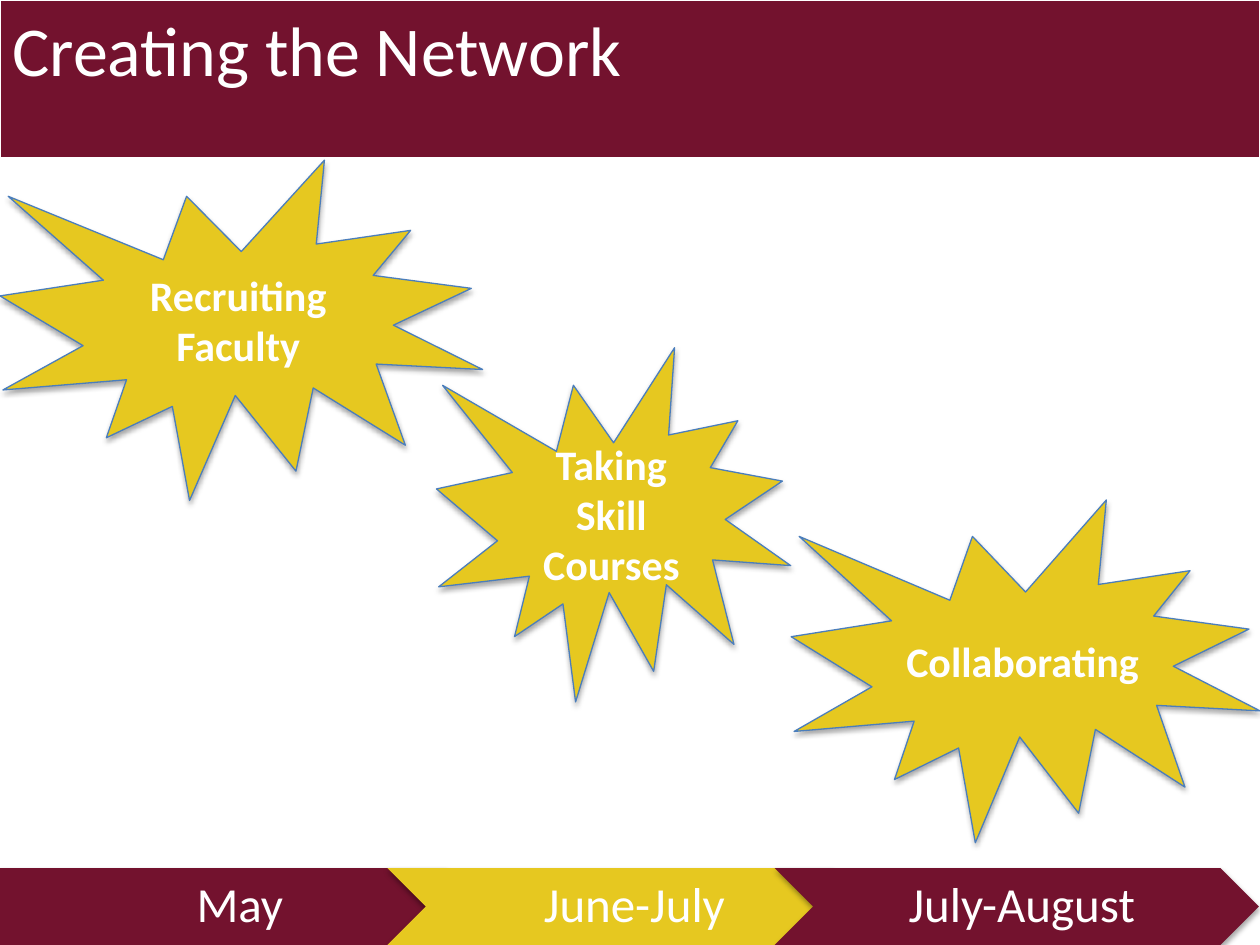
from lxml import etree
from pptx import Presentation
from pptx.dml.color import RGBColor
from pptx.enum.shapes import MSO_SHAPE
from pptx.enum.text import MSO_ANCHOR, MSO_AUTO_SIZE, PP_ALIGN
from pptx.oxml.ns import qn
from pptx.util import Cm, Pt

SEAL = MSO_SHAPE.EXPLOSION1
PLATE = MSO_SHAPE.PENTAGON
CHEVRON = MSO_SHAPE.CHEVRON
TOP, MIDDLE = MSO_ANCHOR.TOP, MSO_ANCHOR.MIDDLE
LEFT, CENTER = PP_ALIGN.LEFT, PP_ALIGN.CENTER
FIXED = MSO_AUTO_SIZE.NONE

WINE, GOLD, BLUE, WHITE = "73122E", "E6C820", "4B7EBC", "FFFFFF"
INSETS = (0.25, 0.13, 0.25, 0.13)


def color(code):
    return RGBColor.from_string(code)


def write(shape, text, size, bold=False, align=CENTER, anchor=MIDDLE,
          insets=INSETS, spacing=1.0):
    frame = shape.text_frame
    frame.word_wrap = True
    frame.auto_size = FIXED
    frame.vertical_anchor = anchor
    (frame.margin_left, frame.margin_top,
     frame.margin_right, frame.margin_bottom) = map(Cm, insets)
    para = frame.paragraphs[0]
    para.alignment = align
    para.line_spacing = spacing
    run = para.add_run()
    run.text = text
    run.font.name = "Calibri"
    run.font.size = Pt(size)
    run.font.bold = bold
    run.font.color.rgb = color(WHITE)


def paint(shape, fill, line=None):
    shape.fill.solid()
    shape.fill.fore_color.rgb = color(fill)
    if line:
        shape.line.color.rgb = color(line)
        shape.line.width = Pt(0.75)
    else:
        shape.line.fill.background()


def shade(shape):
    """Give the shape a soft shadow straight below it."""
    shape.shadow.inherit = False
    effects = shape._element.spPr.find(qn("a:effectLst"))
    outer = etree.SubElement(effects, qn("a:outerShdw"), blurRad=str(Pt(3.1)),
                             dist=str(Pt(1.8)), dir="5400000", rotWithShape="0")
    black = etree.SubElement(outer, qn("a:srgbClr"), val="000000")
    etree.SubElement(black, qn("a:alpha"), val="35000")


def add_title(slide, text, box):
    title = slide.shapes.title
    title.left, title.top, title.width, title.height = map(Cm, box)
    paint(title, WINE, WHITE)
    write(title, text, 40, align=LEFT, anchor=TOP)


def add_burst(slide, text, box):
    burst = slide.shapes.add_shape(SEAL, *map(Cm, box))
    paint(burst, GOLD, BLUE)
    shade(burst)
    write(burst, text, 24, bold=True)


def add_timeline(slide, steps, box):
    left, top, width, height = box
    # Each arrow overlaps the next by a fifth of its length
    length = width / (1 + 0.8 * (len(steps) - 1))
    point = height / 2
    group = slide.shapes.add_group_shape().shapes
    for i, (text, fill) in enumerate(steps):
        x = left + i * 0.8 * length
        arrow = group.add_shape(CHEVRON if i else PLATE,
                                Cm(x), Cm(top), Cm(length), Cm(height))
        paint(arrow, fill)
        shade(arrow)
        # The label keeps clear of the notch and the point
        start = point if i else 0
        span = length - 2 * point if i else length - point / 2
        label = group.add_textbox(Cm(x + start), Cm(top), Cm(span), Cm(height))
        write(label, text, 28, spacing=0.9,
              insets=(0.3 if i else 0.4, 0.2, 0.1, 0.2))


def main():
    deck = Presentation()
    deck.slide_width, deck.slide_height = Cm(25.4), Cm(19.05)
    slide = deck.slides.add_slide(deck.slide_layouts[5])

    # Title band
    add_title(slide, "Creating the Network", (0, 0, 25.4, 3.18))

    # Stages of the work
    for text, box in (
        ("Recruiting Faculty", (0, 3.23, 9.73, 6.86)),
        ("Taking Skill Courses", (8.8, 7.01, 7.14, 7.14)),
        ("Collaborating", (15.95, 10.08, 9.45, 6.91)),
    ):
        add_burst(slide, text, box)

    # Months along the bottom
    steps = (("May", WINE), ("June-July", GOLD), ("July-August", WINE))
    add_timeline(slide, steps, (0, 17.5, 25.38, 1.55))

    deck.save("out.pptx")


if __name__ == "__main__":
    main()
